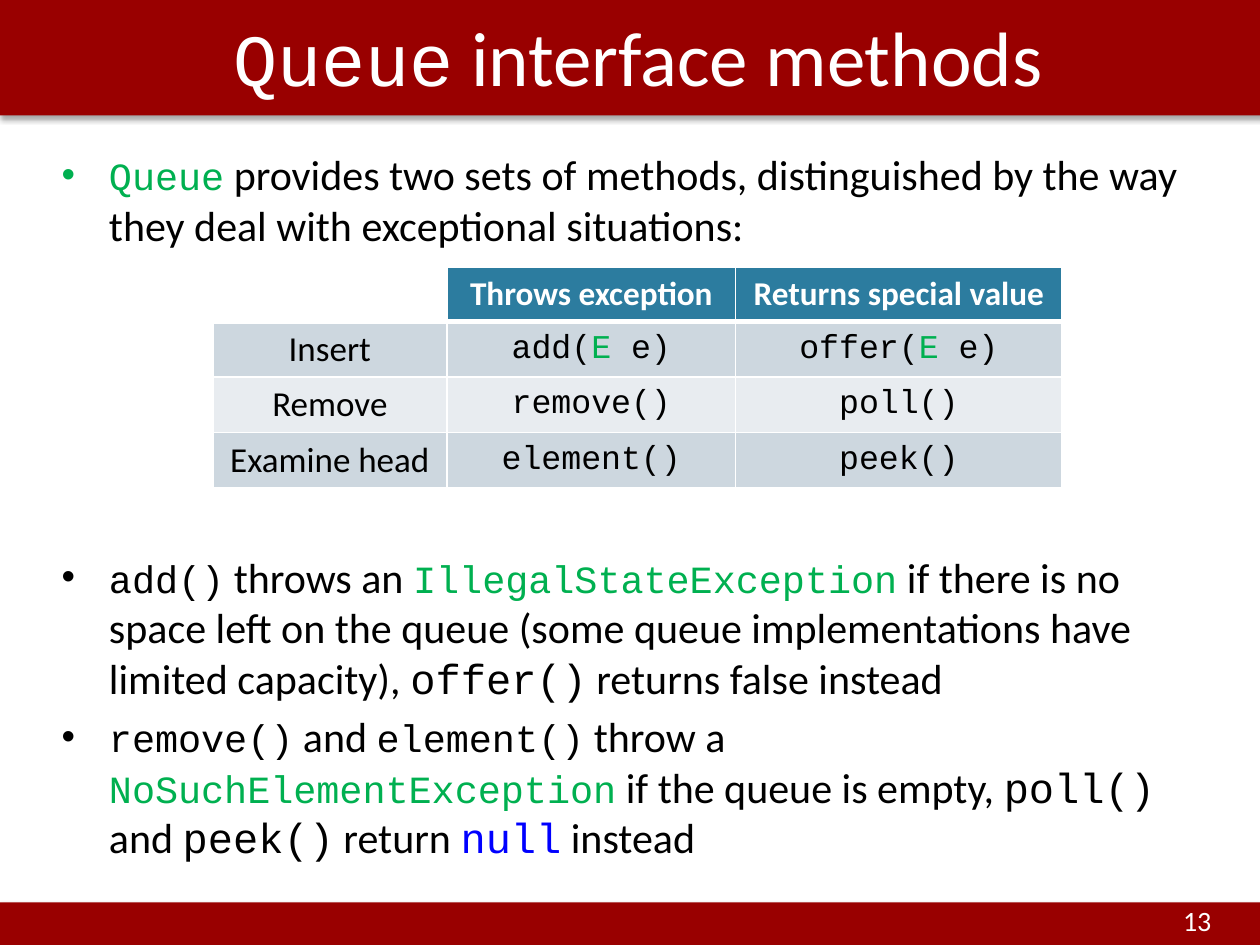
"""Build the slide on the Queue interface methods."""
from dataclasses import dataclass
from functools import partial

from lxml import etree
from pptx import Presentation
from pptx import util as u
from pptx.dml import color
from pptx.enum import shapes, text
from pptx.oxml import ns

RED, GREEN, BLUE = "990000", "00B050", "0000FF"
BLACK, WHITE = "000000", "FFFFFF"
HEADER, ROW_FILLS = "2C7C9F", ("CDD7DF", "E8ECF0")


@dataclass(frozen=True)
class Span:
    words: str
    size: float = 24
    font: str = "Calibri"
    ink: str = BLACK
    bold: bool = False


@dataclass(frozen=True)
class Area:
    left: float
    top: float
    width: float
    height: float

    def lengths(self) -> tuple:
        return tuple(u.Cm(n) for n in (self.left, self.top, self.width, self.height))


Code = partial(Span, font="Courier New")
Heading = partial(Span, size=19, ink=WHITE, bold=True)
Label = partial(Span, size=20)
CellCode = partial(Code, size=19)

BARS = [Area(0, 18.19, 25.5, 0.86), Area(0, -0.03, 25.5, 2.36)]
NUMBER = Area(23.6, 18.08, 2.49, 0.94)
TITLE = Area(0.99, -0.46, 23.75, 3.18)
BODY = Area(0.99, 2.87, 23.75, 14.53)
COLUMNS, ROW_HEIGHT = (4.72, 5.82, 6.58), 1.1
TABLE = Area(4.29, 5.38, sum(COLUMNS), 4 * ROW_HEIGHT)
TABLE_GAP = 172.5

BULLETS = [
    [Code("Queue", 22, ink=GREEN),
     Span(" provides two sets of methods, distinguished by the way they deal with "
          "exceptional situations:")],
    [Code("add()", 22), Span(" throws an "), Code("IllegalStateException", 22, ink=GREEN),
     Span(" if there is no space left on the queue (some queue implementations have "
          "limited capacity), "),
     Code("offer()"), Span(" returns false instead")],
    [Code("remove()", 22), Span(" and "), Code("element()", 22), Span(" throw a "),
     Code("NoSuchElementException", 22, ink=GREEN), Span(" if the queue is empty, "),
     Code("poll()"), Span(" and "), Code("peek()"), Span(" return "),
     Code("null", ink=BLUE), Span(" instead")],
]


def with_element(method: str) -> list[Span]:
    """Give the spans of a method that takes an element."""
    return [CellCode(method + "("), CellCode("E", ink=GREEN), CellCode(" e)")]


CELLS = [
    [[], [Heading("Throws exception")], [Heading("Returns special value")]],
    [[Label("Insert")], with_element("add"), with_element("offer")],
    [[Label("Remove")], [CellCode("remove()")], [CellCode("poll()")]],
    [[Label("Examine head")], [CellCode("element()")], [CellCode("peek()")]],
]


def paint(target, ink: str) -> None:
    """Set the colour of a fill or a font."""
    if hasattr(target, "solid"):
        target.solid()
        target = target.fore_color
    else:
        target = target.color
    target.rgb = color.RGBColor.from_string(ink)


def write(para, spans: list[Span]) -> None:
    """Add the spans to a paragraph run by run."""
    for span in spans:
        run = para.add_run()
        run.text = span.words
        run.font.size = u.Pt(span.size)
        run.font.name = span.font
        run.font.bold = span.bold
        paint(run.font, span.ink)


def place(shape, area: Area) -> None:
    """Move a placeholder and bring it to the front."""
    shape.left, shape.top, shape.width, shape.height = area.lengths()
    shape.text_frame.auto_size = text.MSO_AUTO_SIZE.NONE
    shape.element.getparent().append(shape.element)


def add_colour(parent, ink: str):
    """Add a colour element below an XML fill or effect."""
    return etree.SubElement(parent, ns.qn("a:srgbClr"), val=ink)


def add_bar(page, area: Area) -> None:
    """Draw a red bar with a soft shadow."""
    bar = page.shapes.add_shape(shapes.MSO_SHAPE.RECTANGLE, *area.lengths())
    paint(bar.fill, RED)
    bar.line.fill.background()
    bar.shadow.inherit = False
    effects = bar.element.spPr.find(ns.qn("a:effectLst"))
    shadow = etree.SubElement(effects, ns.qn("a:outerShdw"), blurRad="40000",
                              dist="23000", dir="5400000", rotWithShape="0")
    etree.SubElement(add_colour(shadow, BLACK), ns.qn("a:alpha"), val="35000")


def add_border(cell, side: str, points: float) -> None:
    """Draw one white border of a table cell."""
    line = etree.SubElement(cell._tc.get_or_add_tcPr(), ns.qn("a:ln" + side),
                            w=str(u.Pt(points)))
    add_colour(etree.SubElement(line, ns.qn("a:solidFill")), WHITE)


def add_methods_table(page) -> None:
    """Add the table that compares the two sets of methods."""
    table = page.shapes.add_table(len(CELLS), len(COLUMNS), *TABLE.lengths()).table
    for column, width in zip(table.columns, COLUMNS):
        column.width = u.Cm(width)
    for r, row in enumerate(CELLS):
        table.rows[r].height = u.Cm(ROW_HEIGHT)
        for c, spans in enumerate(row):
            cell = table.cell(r, c)
            cell.vertical_anchor = text.MSO_ANCHOR.MIDDLE
            for side in "LRTB":
                add_border(cell, side, 3 if (r, side) in ((0, "B"), (1, "T")) else 1)
            if not spans:
                cell.fill.background()
                continue
            paint(cell.fill, ROW_FILLS[(r - 1) % 2] if r else HEADER)
            para = cell.text_frame.paragraphs[0]
            para.alignment = text.PP_ALIGN.CENTER
            write(para, spans)


def add_number(page) -> None:
    """Write the page number on the lower bar."""
    box = page.shapes.add_textbox(*NUMBER.lengths())
    box.text_frame.word_wrap = True
    write(box.text_frame.paragraphs[0], [Span("13", 16, ink=WHITE)])


def main() -> None:
    """Build and save the deck."""
    deck = Presentation()
    deck.slide_width, deck.slide_height = u.Cm(25.4), u.Cm(19.05)
    page = deck.slides.add_slide(deck.slide_layouts[1])
    for area in BARS:
        add_bar(page, area)
    add_number(page)

    title, body = page.shapes.title, page.placeholders[1]
    place(title, TITLE)
    title.text_frame.vertical_anchor = text.MSO_ANCHOR.MIDDLE
    heading = title.text_frame.paragraphs[0]
    heading.alignment = text.PP_ALIGN.CENTER
    write(heading, [Code("Queue", 42, ink=WHITE), Span(" interface methods", 44, ink=WHITE)])

    place(body, BODY)
    frame = body.text_frame
    for i, spans in enumerate(BULLETS):
        write(frame.add_paragraph() if i else frame.paragraphs[0], spans)
    frame.paragraphs[1].space_before = u.Pt(TABLE_GAP)
    add_methods_table(page)
    deck.save("out.pptx")


if __name__ == "__main__":
    main()
